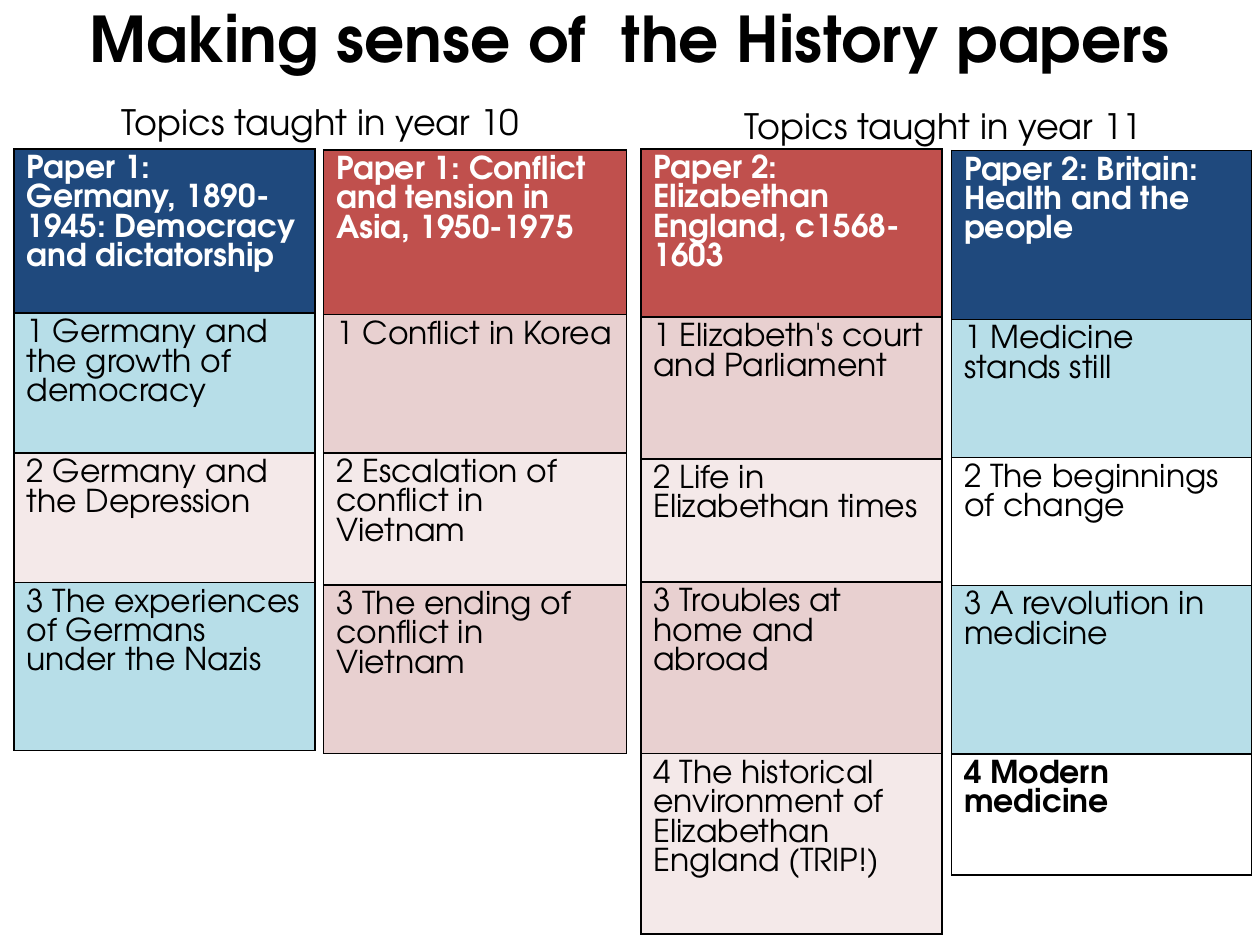
from lxml.etree import SubElement
from pptx import Presentation
from pptx.dml.color import RGBColor
from pptx.enum.text import MSO_ANCHOR, PP_ALIGN
from pptx.oxml.ns import qn
from pptx.util import Pt

# Content: headings as (text, left, top, width, height)
TITLE = ("Making sense of  the History papers", 36, -23.75, 648, 90)
YEARS = [
    ("Topics taught in year 10", 8, 54, 350, 32),
    ("Topics taught in year 11", 364, 56, 350, 32),
]
# Each paper: position, palette, then (text, row height) with the heading first
PAPERS = [
    dict(left=8, top=85.25, width=172, palette="blue_pink", rows=[
        ("Paper 1: Germany, 1890-1945: Democracy and dictatorship", 92),
        ("1 Germany and the growth of democracy", 80),
        ("2 Germany and the Depression", 74),
        ("3 The experiences of Germans under the Nazis", 96)]),
    dict(left=185, top=85.75, width=173, palette="red", rows=[
        ("Paper 1: Conflict and tension in Asia, 1950-1975", 94),
        ("1 Conflict in Korea", 79),
        ("2 Escalation of conflict in Vietnam", 75.5),
        ("3 The ending of conflict in Vietnam", 96.5)]),
    dict(left=366.25, top=85.25, width=172, palette="red", rows=[
        ("Paper 2: Elizabethan England, c1568-1603", 96),
        ("1 Elizabeth's court and Parliament", 81),
        ("2 Life in Elizabethan times", 70.5),
        ("3 Troubles at home and abroad", 98),
        ("4 The historical environment of Elizabethan England (TRIP!)", 103)]),
    dict(left=543.75, top=86, width=171.5, palette="blue_white", rows=[
        ("Paper 2: Britain: Health and the people", 96.5),
        ("1 Medicine stands still", 79),
        ("2 The beginnings of change", 73),
        ("3 A revolution in medicine", 96.5),
        ("4 Modern medicine", 69)]),
]
BOLD_TOPICS = {"4 Modern medicine"}

# Palettes hold heading, odd topic and even topic fills
THEME = dict(
    font="TeX Gyre Adventor", title=36, year=20, cell=18,
    dark="000000", light="FFFFFF", border="000000", border_width=1,
    blue_pink=("1F497D", "B7DEE8", "F4E9E9"),
    blue_white=("1F497D", "B7DEE8", "FFFFFF"),
    red=("C0504D", "E8D0D0", "F4E9E9"),
)


def write_text(frame, text, size, color=THEME["dark"], bold=False,
               align=PP_ALIGN.LEFT):
    frame.word_wrap = True
    paragraph = frame.paragraphs[0]
    paragraph.alignment = align
    run = paragraph.add_run()
    run.text = text
    run.font.name = THEME["font"]
    run.font.size = Pt(size)
    run.font.bold = bold
    run.font.color.rgb = RGBColor.from_string(color)


def add_heading(slide, heading, size, bold=False, anchor=MSO_ANCHOR.TOP):
    text, *box = heading
    frame = slide.shapes.add_textbox(*map(Pt, box)).text_frame
    frame.vertical_anchor = anchor
    write_text(frame, text, size, bold=bold, align=PP_ALIGN.CENTER)


def style_cell(cell, fill):
    properties = cell._tc.get_or_add_tcPr()
    for side in ("lnL", "lnR", "lnT", "lnB"):
        line = SubElement(properties, qn(f"a:{side}"),
                          w=str(Pt(THEME["border_width"])))
        solid = SubElement(line, qn("a:solidFill"))
        SubElement(solid, qn("a:srgbClr"), val=THEME["border"])
    cell.fill.solid()
    cell.fill.fore_color.rgb = RGBColor.from_string(fill)


def add_paper(slide, left, top, width, palette, rows):
    height = sum(row_height for _, row_height in rows)
    table = slide.shapes.add_table(
        len(rows), 1, Pt(left), Pt(top), Pt(width), Pt(height)).table
    heading_fill, *topic_fills = THEME[palette]
    for index, (text, row_height) in enumerate(rows):
        is_heading = index == 0
        table.rows[index].height = Pt(row_height)
        cell = table.cell(index, 0)
        style_cell(cell, heading_fill if is_heading
                   else topic_fills[(index - 1) % 2])
        write_text(cell.text_frame, text, THEME["cell"],
                   color=THEME["light" if is_heading else "dark"],
                   bold=is_heading or text in BOLD_TOPICS)


def main():
    presentation = Presentation()
    presentation.slide_width, presentation.slide_height = Pt(720), Pt(540)
    slide = presentation.slides.add_slide(presentation.slide_layouts[6])

    # Title and year headings
    add_heading(slide, TITLE, THEME["title"], bold=True,
                anchor=MSO_ANCHOR.MIDDLE)
    for year in YEARS:
        add_heading(slide, year, THEME["year"])

    # One table per paper
    for paper in PAPERS:
        add_paper(slide, **paper)

    presentation.save("out.pptx")


if __name__ == "__main__":
    main()
